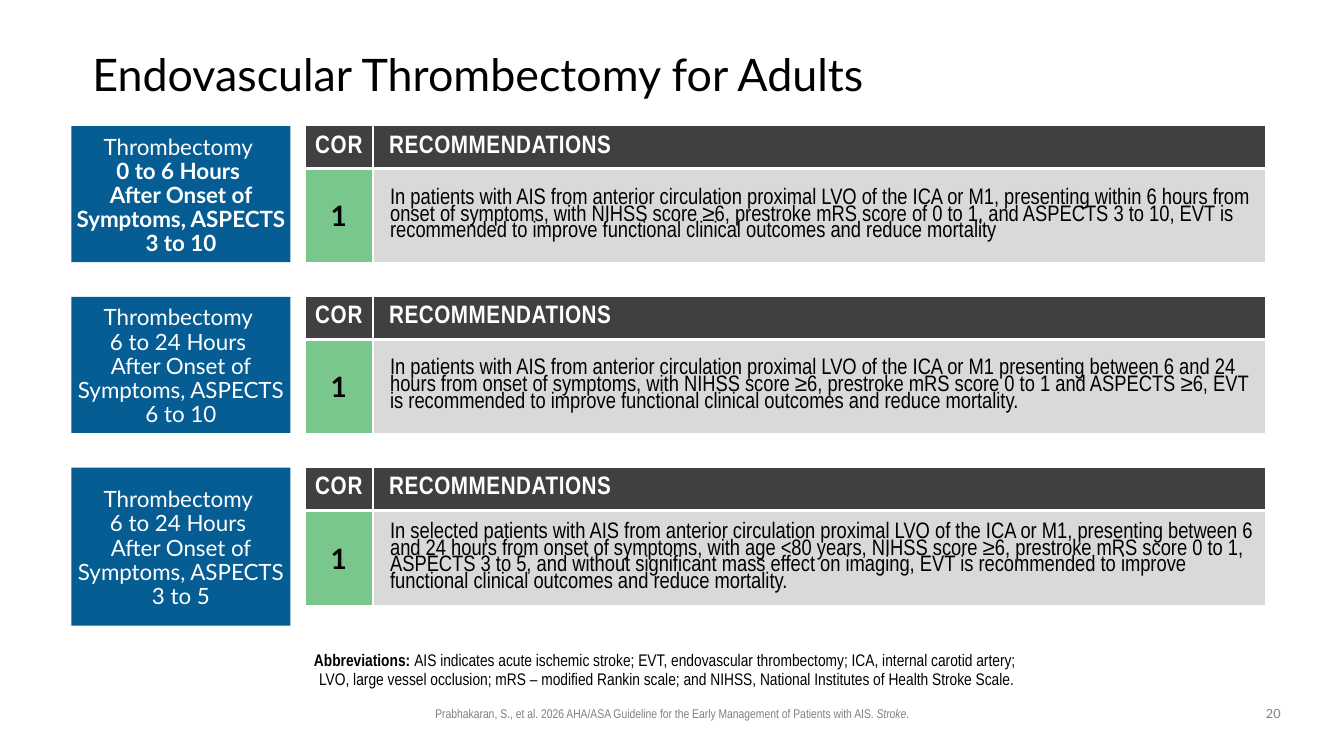
import lxml.etree
import pptx
import pptx.dml.color
import pptx.enum.shapes
import pptx.enum.text
import pptx.oxml.ns
import pptx.util

Pt = pptx.util.Pt
ALIGN = pptx.enum.text.PP_ALIGN
ANCHOR = pptx.enum.text.MSO_ANCHOR
NARROW, LATO = "Arial Narrow", "Lato"
BLACK, WHITE, GREY = "000000", "FFFFFF", "808080"
BLUE, DARK, GREEN, LIGHT = "065D93", "404040", "79C78D", "D9D9D9"

SECTIONS = [
    (97.2, [("Thrombectomy \n", False),
            ("0 to 6 Hours \nAfter Onset of Symptoms, ASPECTS 3 to 10", True)],
     "In patients with AIS from anterior circulation proximal LVO of the ICA or M1, "
     "presenting within 6 hours from onset of symptoms, with NIHSS score ≥6, prestroke "
     "mRS score of 0 to 1, and ASPECTS 3 to 10, EVT is recommended to improve functional "
     "clinical outcomes and reduce mortality"),
    (97.2, [("Thrombectomy \n6 to 24 Hours \nAfter Onset of Symptoms, ASPECTS 6 to 10", False)],
     "In patients with AIS from anterior circulation proximal LVO of the ICA or M1 "
     "presenting between 6 and 24 hours from onset of symptoms, with NIHSS score ≥6, "
     "prestroke mRS score 0 to 1 and ASPECTS ≥6, EVT is recommended to improve functional "
     "clinical outcomes and reduce mortality."),
    (113, [("Thrombectomy \n6 to 24 Hours \nAfter Onset of Symptoms, ASPECTS 3 to 5", False)],
     "In selected patients with AIS from anterior circulation proximal LVO of the ICA or M1, "
     "presenting between 6 and 24 hours from onset of symptoms, with age <80 years, NIHSS "
     "score ≥6, prestroke mRS score 0 to 1, ASPECTS 3 to 5, and without significant mass "
     "effect on imaging, EVT is recommended to improve functional clinical outcomes and "
     "reduce mortality."),
]


def color(code):
    """Turn a hex string into a colour."""
    return pptx.dml.color.RGBColor.from_string(code)


def add_span(para, text, font, size, code, bold=False, italic=False, tracking=0):
    """Add one formatted piece of text, with line breaks where it has them."""
    for number, line in enumerate(text.split("\n")):
        if number:
            para.add_line_break()
        if not line:
            continue
        span = para.add_run()
        span.text = line
        span.font.name = font
        span.font.size = Pt(size)
        span.font.bold = bold
        span.font.italic = italic
        span.font.color.rgb = color(code)
        if tracking:
            span.font._element.set("spc", str(round(tracking * 100)))


def set_margins(holder, left, top, right, bottom):
    """Set the four inner margins of a text frame or table cell."""
    holder.margin_left, holder.margin_top = Pt(left), Pt(top)
    holder.margin_right, holder.margin_bottom = Pt(right), Pt(bottom)


def add_text(page, box, margins, anchor, align, spacing=1.0):
    """Add a wrapping text box and return its first paragraph."""
    frame = page.shapes.add_textbox(*map(Pt, box)).text_frame
    frame.word_wrap = True
    frame.vertical_anchor = anchor
    set_margins(frame, *margins)
    para = frame.paragraphs[0]
    para.alignment = align
    para.line_spacing = spacing
    return para


def add_label(page, box, spans):
    """Add the blue label that names the time window."""
    label = page.shapes.add_shape(pptx.enum.shapes.MSO_SHAPE.RECTANGLE, *map(Pt, box))
    label.shadow.inherit = False
    label.fill.solid()
    label.fill.fore_color.rgb = color(BLUE)
    label.line.fill.background()
    frame = label.text_frame
    frame.word_wrap = True
    frame.vertical_anchor = ANCHOR.MIDDLE
    set_margins(frame, 0, 3, 0, 0)
    para = frame.paragraphs[0]
    para.alignment = ALIGN.CENTER
    para.line_spacing = 0.9
    for text, bold in spans:
        add_span(para, text, LATO, 16, WHITE, bold)


def style_cell(cell, fill, margins, align, spacing=1.0):
    """Give a cell its borders, fill and margins and return its paragraph."""
    properties = cell._tc.get_or_add_tcPr()
    for side in ("lnL", "lnR", "lnT", "lnB"):
        line = lxml.etree.SubElement(
            properties, pptx.oxml.ns.qn("a:" + side), w=str(Pt(2.25)))
        solid = lxml.etree.SubElement(line, pptx.oxml.ns.qn("a:solidFill"))
        lxml.etree.SubElement(solid, pptx.oxml.ns.qn("a:srgbClr"), val=WHITE)
    cell.fill.solid()
    cell.fill.fore_color.rgb = color(fill)
    cell.vertical_anchor = ANCHOR.MIDDLE
    set_margins(cell, *margins)
    para = cell.text_frame.paragraphs[0]
    para.alignment = align
    para.line_spacing = spacing
    return para


def add_recommendation(page, box, advice):
    """Add the table with the class of recommendation and its wording."""
    left, top, width, height = box
    table = page.shapes.add_table(2, 2, *map(Pt, box)).table
    table.first_row = table.horz_banding = False
    table.columns[0].width, table.columns[1].width = Pt(49), Pt(width - 49)
    table.rows[0].height, table.rows[1].height = Pt(31.5), Pt(height - 31.5)
    para = style_cell(table.cell(0, 0), DARK, (7.2, 3.6, 7.2, 3.6), ALIGN.CENTER)
    add_span(para, "COR", NARROW, 18, WHITE, True, tracking=0.5)
    para = style_cell(table.cell(0, 1), DARK, (11.5, 3.6, 7.2, 3.6), ALIGN.LEFT)
    add_span(para, "RECOMMENDATIONS", NARROW, 18, WHITE, True, tracking=0.4)
    para = style_cell(table.cell(1, 0), GREEN, (3.6,) * 4, ALIGN.CENTER)
    add_span(para, "1", LATO, 20, BLACK, True)
    para = style_cell(table.cell(1, 1), LIGHT, (12.2, 3.6, 3.6, 3.6), ALIGN.LEFT, 0.8)
    add_span(para, advice, NARROW, 16, BLACK)


def add_section(page, box, spans, advice):
    """Place a label and its recommendation table side by side."""
    left, top, width, height = box
    add_label(page, (left, top, 156.5, height), spans)
    add_recommendation(page, (left + 166.5, top - 1, width - 166.5, 99), advice)


def add_notes_band(page, box):
    """Add the abbreviations, the citation and the slide number."""
    left, top, width, height = box
    para = add_text(page, (left + 135.5, top, 689, 33), (0, 3.6, 7.2, 3.6),
                    ANCHOR.BOTTOM, ALIGN.CENTER, 0.9)
    add_span(para, "Abbreviations: ", NARROW, 12, BLACK, True)
    add_span(para, "AIS indicates acute ischemic stroke; EVT, endovascular thrombectomy; "
             "ICA, internal carotid artery; \nLVO, large vessel occlusion; mRS – modified "
             "Rankin scale; and NIHSS, National Institutes of Health Stroke Scale.",
             NARROW, 12, BLACK)
    margins = (7.2, 3.6, 7.2, 3.6)
    para = add_text(page, (left + 170, top + 38, 620.5, 18), margins, ANCHOR.TOP, ALIGN.CENTER)
    add_span(para, "Prabhakaran, S., et al. 2026 AHA/ASA Guideline for the Early Management "
             "of Patients with AIS. ", NARROW, 9, GREY)
    add_span(para, "Stroke", NARROW, 9, GREY, italic=True)
    add_span(para, ".", NARROW, 9, GREY)
    para = add_text(page, (left + width - 65.5, top + 38, 30, 18), margins,
                    ANCHOR.TOP, ALIGN.CENTER)
    add_span(para, "20", LATO, 9, GREY)


def main():
    """Build the slide and save it."""
    deck = pptx.Presentation()
    deck.slide_width, deck.slide_height = Pt(960), Pt(540)
    page = deck.slides.add_slide(deck.slide_layouts[6])
    para = add_text(page, (66, 29, 828, 52), (0,) * 4, ANCHOR.MIDDLE, ALIGN.LEFT, 0.9)
    add_span(para, "Endovascular Thrombectomy for Adults", LATO, 32, BLACK)
    for number, (height, spans, advice) in enumerate(SECTIONS):
        add_section(page, (51, 90 + 122 * number, 853.5, height), spans, advice)
    add_notes_band(page, (0, 462.5, 960, 77.5))
    deck.save("out.pptx")


if __name__ == "__main__":
    main()
